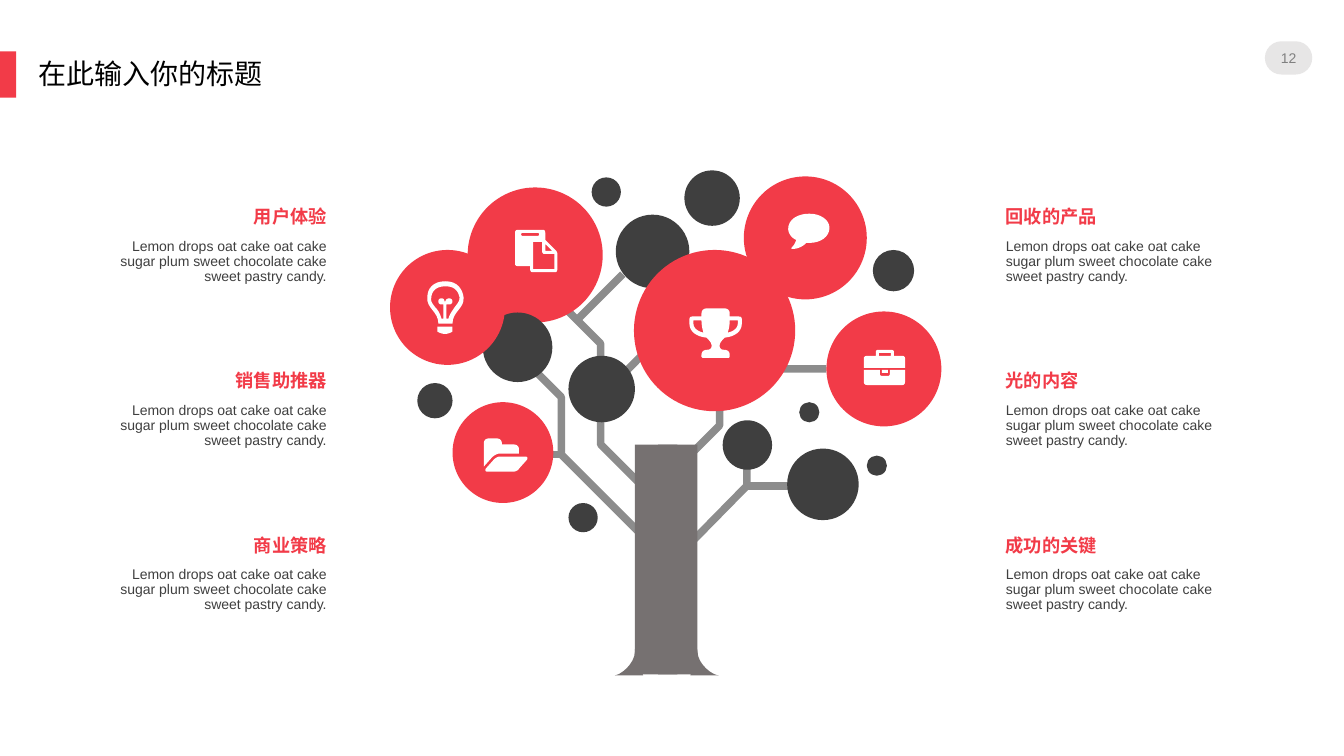
from pptx import Presentation
from pptx.dml.color import RGBColor
from pptx.enum.shapes import MSO_CONNECTOR, MSO_SHAPE
from pptx.enum.text import MSO_ANCHOR, PP_ALIGN
from pptx.oxml.ns import qn
from pptx.util import Cm, Pt
from lxml.etree import SubElement

COLORS = {"red": "F23B48", "dark": "3F3F3F", "branch": "8C8C8C", "trunk": "767171",
          "pale": "E7E6E6", "muted": "808080", "white": "FFFFFF", "black": "000000"}
UNIT_CM = 2.54
CURVE_STEPS = 8

BRANCHES = [
    [(6.5, 5.44), (5.57, 4.51), (5.57, 3.94), (5.17, 3.54)],
    [(6.84, 4.52), (7.14, 4.22), (7.14, 3.52), (7.84, 2.82), (7.84, 2.38)],
    [(7.14, 4.06), (7.54, 3.66), (8.2, 3.66)],
    [(6.5, 3.39), (5.96, 3.94)],
    [(5.48, 2.93), (5.96, 3.41), (5.96, 4.41), (6.38, 4.83)],
    [(7.55, 3.12), (7.03, 2.6)],
    [(6.84, 5.4), (7.41, 4.82), (7.41, 4.41)],
    [(5.57, 4.51), (5.3, 4.51)],
    [(7.41, 4.82), (7.84, 4.82)],
    [(5.72, 3.18), (6.18, 2.72)],
]

LEAVES = [
    (8.2, 3.09, 1.14, "red"), (7.38, 1.75, 1.22, "red"), (4.64, 1.86, 1.34, "red"),
    (7.81, 4.45, 0.71, "dark"), (6.11, 2.13, 0.73, "dark"), (4.49, 3.99, 1, "red"),
    (5.64, 3.53, 0.66, "dark"), (7.17, 4.17, 0.49, "dark"), (4.14, 3.8, 0.35, "dark"),
    (8.66, 2.48, 0.41, "dark"), (5.87, 1.76, 0.29, "dark"), (5.64, 4.99, 0.29, "dark"),
    (8.6, 4.52, 0.2, "dark"), (4.79, 3.1, 0.69, "dark"), (7.93, 3.99, 0.2, "dark"),
    (3.87, 2.48, 1.14, "red"), (6.79, 1.69, 0.55, "dark"), (6.29, 2.48, 1.6, "red"),
]

ROOTS = [
    (6.1, 6.44, "M 20 2 C 20 15 5 26 0 26 L 28 26 L 20 0"),
    (6.85, 6.44, "M 7 2 C 7 15 22 26 28 26 L 0 26 L 7 0"),
]

BRIEFCASE = """
M 4 6 L 12 6 L 12 2 C 12 1 13 0 14 0 L 27 0 C 29 0 30 1 30 2 L 30 6 L 38 6
C 40 6 41 7 41 9 L 41 18 L 0 18 L 0 9 C 0 7 1 6 4 6
M 15 3 L 15 6 L 27 6 L 27 3
M 0 20 L 16 20 L 16 24 C 16 25 17 26 18 26 L 24 26 C 25 26 26 25 26 24 L 26 20
L 41 20 L 41 31 C 41 34 40 35 38 35 L 4 35 C 1 35 0 34 0 31
M 18 20 L 24 20 L 24 23 L 18 23"""
BUBBLE = """
M 21 0 C 32 0 41 6 41 14 C 41 23 32 29 21 29 L 18 29 C 14 33 9 35 4 35
C 3 35 3 34 4 33 C 6 31 7 29 8 26 C 3 24 0 19 0 15 C 0 6 9 0 21 0"""
FOLDER = """
M 16 18 L 41 18 C 43 18 44 19 43 21 L 35 30 C 34 32 31 33 29 33 L 4 33
C 2 33 1 32 2 30 L 10 21 C 12 19 14 18 16 18
M 5 0 L 13 0 C 16 0 18 2 18 5 L 18 6 L 30 6 C 33 6 35 8 35 11 L 35 15 L 16 15
C 13 15 10 17 8 19 L 0 28 L 0 5 C 0 2 2 0 5 0"""
PAGES = """
M 3 0 L 28 0 C 29 0 30 1 30 3 L 30 10 L 40 20 C 41 21 42 22 42 24 L 42 39
C 42 41 41 42 40 42 L 17 42 C 16 42 15 41 15 39 L 15 36 L 3 36 C 1 36 0 35 0 34
L 0 3 C 0 1 1 0 3 0
M 30 14 L 30 21 L 37 21
M 18 12 L 18 39 L 39 39 L 39 24 L 29 24 C 28 24 27 23 27 22 L 27 12
M 7 3 L 23 3 L 24 4 L 24 5 L 23 6 L 7 6 L 6 5 L 6 4"""
BULB = """
M 26 42 C 26 30 38 27 37 16 C 36 8 31 0 19 0 C 6 0 1 8 1 16 C 0 27 12 30 12 42
M 5 16 C 5 13 7 5 19 5 C 31 5 32 13 33 16 C 33 20 31 22 28 26 C 26 29 23 33 22 37
L 20 37 L 20 23 L 23 23 C 24 23 26 22 26 20 C 26 18 24 17 23 17 C 21 17 19 18 19 20
L 18 20 C 18 18 17 17 15 17 C 13 17 12 18 12 20 C 12 22 13 23 15 23 L 17 23 L 17 37
L 15 37 C 14 33 12 29 9 26 C 6 22 4 20 5 16
M 11 50 C 16 53 21 53 26 50 L 26 45 L 11 45"""
TROPHY = """
M 17 0 L 35 0 C 38 0 40 2 40 5 L 40 8 L 49 8 C 51 8 52 9 52 11 L 52 15
C 52 23 45 28 35 29 C 32 32 30 34 30 37 C 30 40 32 41 34 41 C 38 41 40 43 40 46
L 40 48 L 39 49 L 13 49 L 12 48 L 12 46 C 12 43 14 41 18 41 C 20 41 22 40 22 37
C 22 34 20 32 17 29 C 7 28 0 23 0 15 L 0 11 C 0 9 1 8 3 8 L 12 8 L 12 5
C 12 2 14 0 17 0
M 40 12 C 40 17 39 21 38 24 C 43 23 48 20 48 15 L 48 12
M 4 12 L 4 15 C 4 20 9 23 14 24 C 13 21 12 17 12 12"""
ICONS = [(8.57, 3.47, BRIEFCASE), (7.82, 2.12, BUBBLE), (4.8, 4.35, FOLDER),
         (5.11, 2.28, PAGES), (4.23, 2.79, BULB), (6.84, 3.06, TROPHY)]

BODY = "Lemon drops oat cake oat cake sugar plum sweet chocolate cake sweet pastry candy."
COLUMNS = [
    (1.18, PP_ALIGN.RIGHT, ["用户体验", "销售助推器", "商业策略"]),
    (9.98, PP_ALIGN.LEFT, ["回收的产品", "光的内容", "成功的关键"]),
]


def length(value):
    return Cm(value * UNIT_CM)


def rgb(name):
    return RGBColor.from_string(COLORS[name])


def write(tf, text, size=10, color="dark", bold=False, align=PP_ALIGN.LEFT, spacing=0.9):
    p = tf.paragraphs[0]
    p.alignment, p.line_spacing = align, spacing
    r = p.add_run()
    r.text = text
    r.font.name, r.font.size, r.font.bold = "Arial", Pt(size), bold
    r.font.color.rgb = rgb(color)


def outline(left, top, commands):
    contours, values = [], iter(commands.split())
    for command in values:
        count = 3 if command == "C" else 1
        pts = [(left + int(next(values)) / 100, top + int(next(values)) / 100)
               for _ in range(count)]
        if command == "M":
            contours.append(pts)
        elif command == "L":
            contours[-1] += pts
        else:
            curve = [contours[-1][-1], *pts]
            for step in range(1, CURVE_STEPS + 1):
                t = step / CURVE_STEPS
                weights = ((1 - t) ** 3, 3 * t * (1 - t) ** 2, 3 * t * t * (1 - t), t ** 3)
                contours[-1].append(tuple(sum(w * pt[axis] for w, pt in zip(weights, curve))
                                          for axis in (0, 1)))
    return contours


class TreeSlide:
    line_width = Pt(5.38)

    def __init__(self, slide):
        self.shapes = slide.shapes

    def shape(self, kind, x, y, w, h, color):
        sp = self.shapes.add_shape(kind, *map(length, (x, y, w, h)))
        self.paint(sp, color)
        return sp

    def paint(self, sp, color):
        sp.shadow.inherit = False
        sp.fill.solid()
        sp.fill.fore_color.rgb = rgb(color)
        sp.line.fill.background()

    def freeform(self, contours, close=True):
        contours = [[(length(x), length(y)) for x, y in pts] for pts in contours]
        builder = self.shapes.build_freeform(*contours[0][0])
        for i, pts in enumerate(contours):
            if i:
                builder.move_to(*pts[0])
            builder.add_line_segments(pts[1:], close=close)
        return builder.convert_to_shape()

    def filled(self, x, y, commands, color):
        self.paint(self.freeform(outline(x, y, commands)), color)

    def branch(self, pts):
        if len(pts) == 2:
            sp = self.shapes.add_connector(MSO_CONNECTOR.STRAIGHT,
                                           *[length(v) for pt in pts for v in pt])
            SubElement(sp._element.spPr, qn("a:effectLst"))
        else:
            sp = self.freeform([pts], close=False)
            sp.shadow.inherit = False
            sp.fill.background()
        sp.line.color.rgb = rgb("branch")
        sp.line.width = self.line_width

    def text(self, x, y, w, h, text, inset=(0, 0), anchor=MSO_ANCHOR.TOP, **style):
        tf = self.shapes.add_textbox(*map(length, (x, y, w, h))).text_frame
        tf.word_wrap, tf.vertical_anchor = True, anchor
        tf.margin_left = tf.margin_right = length(inset[0])
        tf.margin_top = tf.margin_bottom = length(inset[1])
        write(tf, text, **style)


def main():
    prs = Presentation()
    prs.slide_width, prs.slide_height = Cm(33.87), Cm(19.05)
    s = TreeSlide(prs.slides.add_slide(prs.slide_layouts[6]))
    s.shape(MSO_SHAPE.RECTANGLE, 0, 0.51, 0.16, 0.46, "red")
    badge = s.shape(MSO_SHAPE.ROUNDED_RECTANGLE, 12.55, 0.41, 0.47, 0.33, "pale")
    badge.adjustments[0] = 0.5
    s.text(12.55, 0.36, 0.47, 0.43, "12", anchor=MSO_ANCHOR.MIDDLE, color="muted",
           align=PP_ALIGN.CENTER, spacing=1.0)
    for pts in BRANCHES:
        s.branch(pts)
    for x, y, commands in ROOTS:
        s.filled(x, y, commands, "trunk")
    for x, y, size, color in LEAVES:
        s.shape(MSO_SHAPE.OVAL, x, y, size, size, color)
    for x, y, commands in ICONS:
        s.filled(x, y, commands, "white")
    for x, align, headings in COLUMNS:
        for row, heading in enumerate(headings):
            y = 2.06 + 1.63 * row
            s.text(x, y + 0.31, 2.06, 0.58, BODY, align=align)
            s.text(x, y, 2.06, 0.31, heading, size=13, color="red", bold=True, align=align)
    for x, w in ((6.53, 0.19), (6.3, 0.62)):
        s.shape(MSO_SHAPE.RECTANGLE, x, 4.41, w, 2.28, "trunk")
    s.text(0.28, 0.55, 4.17, 0.46, "在此输入你的标题", inset=(0.1, 0.05), size=20, color="black")
    prs.save("out.pptx")


if __name__ == "__main__":
    main()
